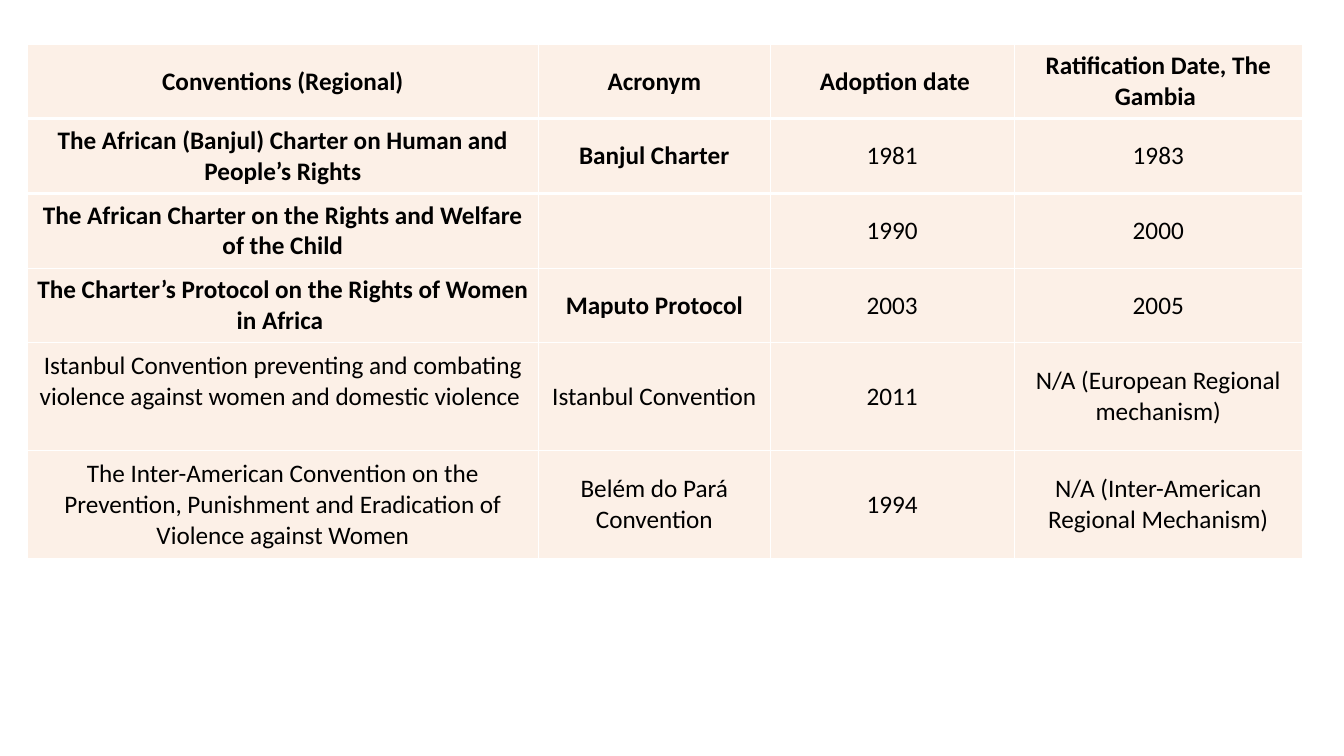
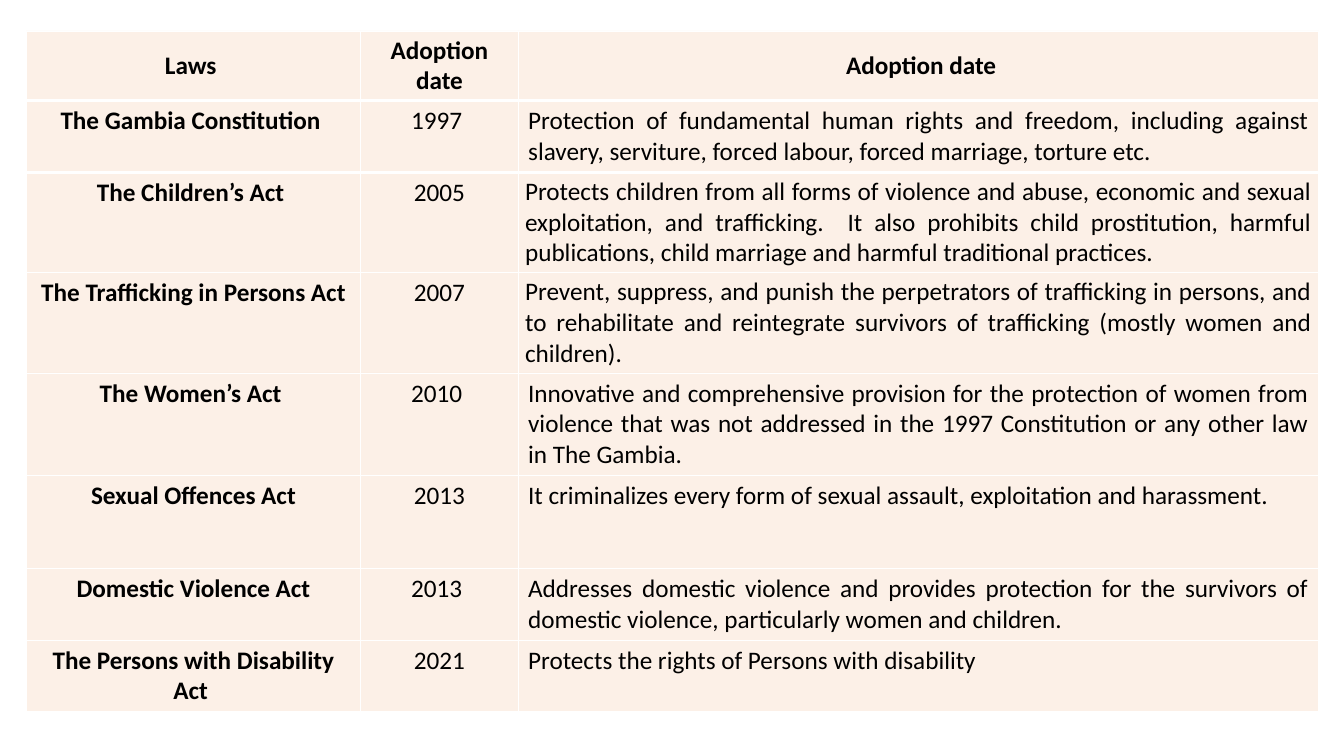
from lxml import etree
from pptx import Presentation
from pptx import util as u
from pptx.dml.color import RGBColor
from pptx.enum import text
from pptx.oxml import ns

PEACH = RGBColor(0xF4, 0xB1, 0x83)
WHITE = RGBColor(0xFF, 0xFF, 0xFF)
BLACK = RGBColor(0x00, 0x00, 0x00)
CENTER = text.PP_ALIGN.CENTER
JUSTIFY = text.PP_ALIGN.JUSTIFY

CONVENTIONS = [
    ["Conventions (Regional)", "Acronym", " Adoption date", "Ratification Date, The Gambia "],
    ["The African (Banjul) Charter on Human and People’s Rights", "Banjul Charter", "1981", "1983"],
    ["The African Charter on the Rights and Welfare of the Child", "", "1990", "2000"],
    ["The Charter’s Protocol on the Rights of Women in Africa ", "Maputo Protocol", "2003", "2005"],
    ["Istanbul Convention preventing and combating violence against women and domestic violence ",
     "Istanbul Convention", "2011", "N/A (European Regional mechanism)"],
    ["The Inter-American Convention on the Prevention, Punishment and Eradication of "
     "Violence against Women",
     "Belém do Pará Convention", "1994", "N/A (Inter-American Regional Mechanism)"],
]

LAWS = [
    ["Laws ", "Adoption date", " Adoption date"],
    ["The Gambia Constitution ", "1997 ",
     "Protection of fundamental human rights and freedom, including against slavery, "
     "serviture, forced labour, forced marriage, torture etc."],
    ["The Children’s Act ", "2005",
     "Protects children from all forms of violence and abuse, economic and sexual "
     "exploitation, and trafficking.  It also prohibits child prostitution, harmful "
     "publications, child marriage and harmful traditional practices."],
    ["The Trafficking in Persons Act", "2007",
     "Prevent, suppress, and punish the perpetrators of trafficking in persons, and to "
     "rehabilitate and reintegrate survivors of trafficking (mostly women and children)."],
    ["The Women’s Act ", "2010 ",
     "Innovative and comprehensive provision for the protection of women from violence that "
     "was not addressed in the 1997 Constitution or any other law in The Gambia."],
    ["Sexual Offences Act", "2013",
     "It criminalizes every form of sexual assault, exploitation and harassment."],
    ["Domestic Violence Act", "2013 ",
     "Addresses domestic violence and provides protection for the survivors of domestic "
     "violence, particularly women and children."],
    ["The Persons with Disability Act ", "2021", "Protects the rights of Persons with disability"],
]


def set_values(target, values):
    for name, value in values.items():
        setattr(target, name, value)


class Deck:
    FONT = {"name": "Calibri", "size": u.Pt(18)}
    OPACITY = 19
    THIN, THICK = u.Pt(0.81), u.Pt(2.44)
    COMPACT = {
        "vertical_anchor": text.MSO_ANCHOR.MIDDLE,
        "margin_left": u.Inches(0.07), "margin_right": u.Inches(0.07),
        "margin_top": u.Inches(0.04), "margin_bottom": u.Inches(0.04),
    }
    ROOMY = {
        "vertical_anchor": text.MSO_ANCHOR.TOP,
        "margin_left": u.Inches(0.1), "margin_right": u.Inches(0.1),
        "margin_top": u.Inches(0.05), "margin_bottom": u.Inches(0.05),
    }

    def __init__(self):
        self.presentation = Presentation()
        set_values(self.presentation,
                   {"slide_width": u.Inches(13.33), "slide_height": u.Inches(7.5)})
        self.slide = None

    def across(self, percent):
        return round(self.presentation.slide_width * percent / 100)

    def down(self, percent):
        return round(self.presentation.slide_height * percent / 100)

    def new_slide(self):
        self.slide = self.presentation.slides.add_slide(self.presentation.slide_layouts[6])

    def table(self, left, top, widths, heights, content, is_bold, is_compact, is_justified):
        frame = self.slide.shapes.add_table(
            len(heights), len(widths), self.across(left), self.down(top),
            self.across(sum(widths)), self.down(sum(heights)))
        table = frame.table
        set_values(table, {"first_row": False, "horz_banding": False})
        for column, width in zip(table.columns, widths):
            column.width = self.across(width)
        for row, height in zip(table.rows, heights):
            row.height = self.down(height)
        for row, values in enumerate(content):
            for column, value in enumerate(values):
                cell = table.cell(row, column)
                set_values(cell, self.COMPACT if is_compact(row, column) else self.ROOMY)
                self.fill_cell(cell, row)
                if value:
                    alignment = JUSTIFY if is_justified(row, column) else CENTER
                    self.cell_text(cell, value, is_bold(row, column), alignment)
        return table

    def cell_text(self, cell, value, bold, alignment):
        paragraph = cell.text_frame.paragraphs[0]
        paragraph.alignment = alignment
        run = paragraph.add_run()
        run.text = value
        set_values(run.font, {**self.FONT, "bold": bold})
        run.font.color.rgb = BLACK

    def fill_cell(self, cell, row):
        cell.fill.solid()
        cell.fill.fore_color.rgb = PEACH
        properties = cell._tc.get_or_add_tcPr()
        color = properties.find(".//" + ns.qn("a:srgbClr"))
        etree.SubElement(color, ns.qn("a:alpha"), val=str(self.OPACITY * 1000))
        above = self.THICK if row in (1, 2) else self.THIN
        below = self.THICK if row in (0, 1) else self.THIN
        borders = {"a:lnL": self.THIN, "a:lnR": self.THIN, "a:lnT": above, "a:lnB": below}
        for position, (tag, width) in enumerate(borders.items()):
            line = etree.Element(ns.qn(tag), w=str(int(width)))
            solid = etree.SubElement(line, ns.qn("a:solidFill"))
            etree.SubElement(solid, ns.qn("a:srgbClr"), val=str(WHITE))
            properties.insert(position, line)


def main():
    deck = Deck()

    deck.new_slide()
    conventions = deck.table(
        2.03, 5.87, [38.03, 17.25, 18.15, 21.45], [9.87] * 4 + [14.27] * 2, CONVENTIONS,
        is_bold=lambda row, column: row == 0 or (row < 4 and column < 2),
        is_compact=lambda row, column: True,
        is_justified=lambda row, column: False)
    conventions.cell(4, 0).margin_bottom = u.Inches(0.35)

    deck.new_slide()
    deck.table(
        1.95, 4.1, [24.9, 11.7, 59.57], [8.95, 9.5, 13.2, 13.2, 13.5, 12.3, 9.5, 9.5], LAWS,
        is_bold=lambda row, column: row == 0 or column == 0,
        is_compact=lambda row, column: row == 0 or (row in (2, 3) and column == 2),
        is_justified=lambda row, column: row > 0 and column == 2)

    deck.presentation.save("out.pptx")


if __name__ == "__main__":
    main()
